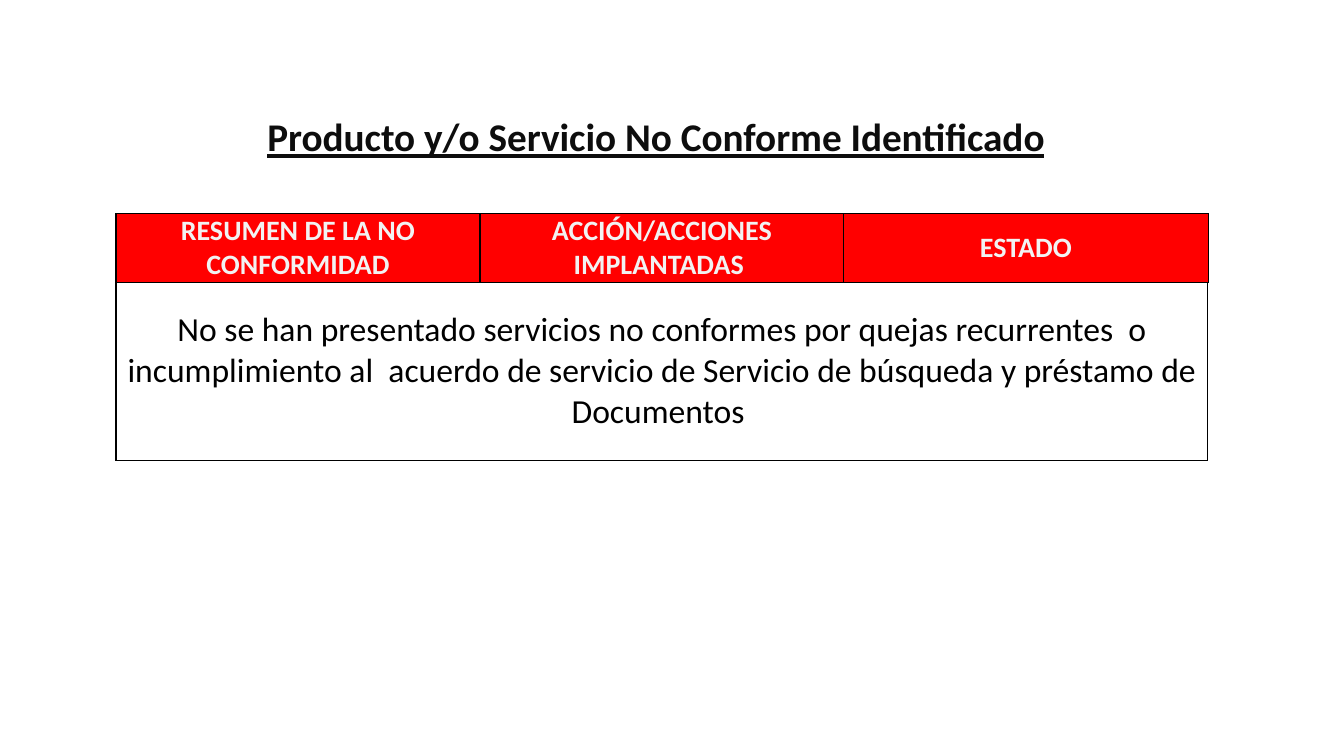
import pptx
import pptx.dml.color
import pptx.enum.text
import pptx.oxml.ns
import pptx.util
import lxml.etree

Inches = pptx.util.Inches
Pt = pptx.util.Pt
ALIGN = pptx.enum.text.PP_ALIGN
ANCHOR = pptx.enum.text.MSO_ANCHOR
COLORS = {"title": "0D0D0D", "header": "FF0000", "header_text": "F2F2F2",
          "body_text": "000000", "border": "000000"}


def write_centered(text_frame, text, size, color, bold):
    paragraph = text_frame.paragraphs[0]
    paragraph.alignment = ALIGN.CENTER
    run = paragraph.add_run()
    run.text = text
    run.font.name = "Calibri"
    run.font.size = Pt(size)
    run.font.bold = bold
    run.font.color.rgb = pptx.dml.color.RGBColor.from_string(COLORS[color])
    return run


def set_borders(cell, widths):
    properties = cell._tc.get_or_add_tcPr()
    for side in ("L", "R", "T", "B"):
        line = lxml.etree.SubElement(properties, pptx.oxml.ns.qn("a:ln" + side),
                                     w=str(Pt(widths.get(side, 1))))
        fill = lxml.etree.SubElement(line, pptx.oxml.ns.qn("a:solidFill"))
        lxml.etree.SubElement(fill, pptx.oxml.ns.qn("a:srgbClr"), val=COLORS["border"])


presentation = pptx.Presentation()
presentation.slide_width = Inches(13.33)
presentation.slide_height = Inches(7.5)
slide = presentation.slides.add_slide(presentation.slide_layouts[5])

# Title
title = slide.shapes.title
title.left, title.top = Inches(1.15), Inches(1.15)
title.width, title.height = Inches(10.71), Inches(0.49)
title.text_frame.word_wrap = True
title.text_frame.vertical_anchor = ANCHOR.BOTTOM
title_run = write_centered(title.text_frame, "Producto y/o Servicio No Conforme Identificado",
                           28, "title", True)
title_run.font.underline = True
title.text_frame.paragraphs[0].line_spacing = 0.9

# Table grid
headers = ["RESUMEN DE LA NO CONFORMIDAD", "ACCIÓN/ACCIONES IMPLANTADAS ", "ESTADO"]
table = slide.shapes.add_table(2, len(headers), Inches(1.15), Inches(2.12),
                               Inches(10.83), Inches(2.45)).table
table.horz_banding = False
for column in table.columns:
    column.width = Inches(3.61)
table.rows[0].height = Inches(0.68)
table.rows[1].height = Inches(1.77)

# Header row
for index, header in enumerate(headers):
    cell = table.cell(0, index)
    cell.vertical_anchor = ANCHOR.MIDDLE
    cell.margin_left = cell.margin_right = cell.margin_top = cell.margin_bottom = 0
    set_borders(cell, {"T": 0.5, "R": 0.5} if header == "ESTADO" else {})
    cell.fill.solid()
    cell.fill.fore_color.rgb = pptx.dml.color.RGBColor.from_string(COLORS["header"])
    write_centered(cell.text_frame, header, 20, "header_text", True)

# Merged statement row
statement = table.cell(1, 0)
statement.merge(table.cell(1, len(headers) - 1))
for index in range(len(headers)):
    cell = table.cell(1, index)
    set_borders(cell, {})
    cell.fill.background()
statement.vertical_anchor = ANCHOR.MIDDLE
write_centered(statement.text_frame,
               "No se han presentado servicios no conformes por quejas recurrentes  o "
               "incumplimiento al  acuerdo de servicio de Servicio de búsqueda y préstamo "
               "de Documentos ", 24, "body_text", False)

presentation.save("out.pptx")
